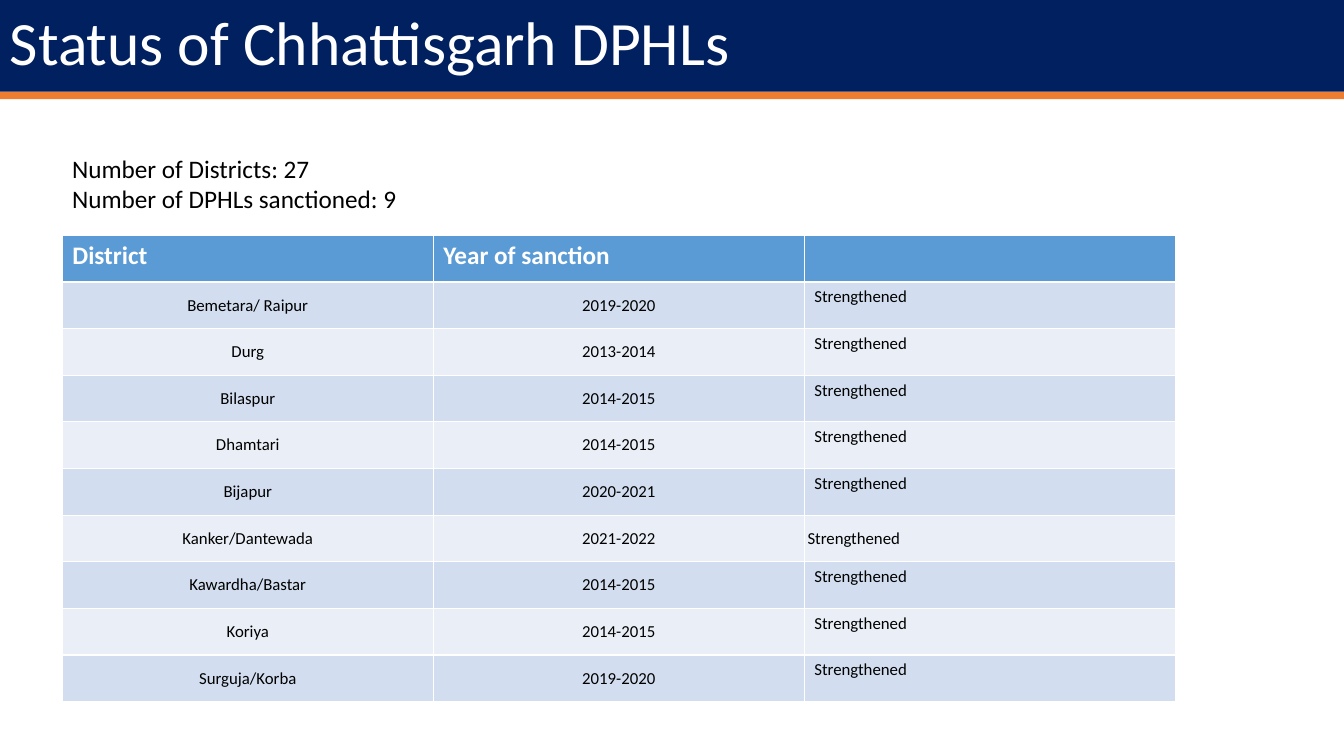
"""Build the slide on the status of the Chhattisgarh DPHLs."""
from pptx import Presentation
from pptx.dml.color import RGBColor
from pptx.enum.shapes import MSO_SHAPE as Shape
from pptx.enum.text import MSO_ANCHOR as Anchor, PP_ALIGN as Align
from pptx.util import Cm, Pt

TITLE = "Status of Chhattisgarh DPHLs"
TOTALS = ["Number of Districts: 27", "Number of DPHLs sanctioned: 9"]
HEADINGS = ["District", "Year of sanction", ""]
STATUS = "Strengthened"
SANCTIONS = [
    ("Bemetara/ Raipur", "2019-2020"),
    ("Durg", "2013-2014"),
    ("Bilaspur", "2014-2015"),
    ("Dhamtari", "2014-2015"),
    ("Bijapur", "2020-2021"),
    ("Kanker/Dantewada", "2021-2022"),
    ("Kawardha/Bastar", "2014-2015"),
    ("Koriya", "2014-2015"),
    ("Surguja/Korba", "2019-2020"),
]
CENTRED_STATUS = "Kanker/Dantewada"

WHITE, BLACK, NAVY, ORANGE = "FFFFFF", "000000", "002060", "ED7D31"
HEADING_BLUE, BANDS = "5B9BD5", ["D2DEEF", "EAEFF7"]
WIDTH, HEIGHT = Cm(33.87), Cm(19.05)
BANNER_HEIGHT, STRIPE_HEIGHT = Cm(2.31), Cm(0.19)
LEFT, TABLE_TOP = Cm(1.57), Cm(5.93)
TABLE_WIDTH, TABLE_HEIGHT = Cm(28.05), Cm(11.75)


def paint(colour_format, colour):
    colour_format.rgb = RGBColor.from_string(colour)


def write(frame, lines, size, colour, bold=False, align=Align.LEFT):
    frame.text = "\n".join(lines)
    frame.word_wrap = True
    for paragraph in frame.paragraphs:
        paragraph.alignment = align
        font = paragraph.font
        font.name, font.size, font.bold = "Calibri", Pt(size), bold
        paint(font.color, colour)


def add_band(slide, top, height, colour):
    band = slide.shapes.add_shape(Shape.RECTANGLE, 0, top, WIDTH, height)
    band.shadow.inherit = False
    band.fill.solid()
    paint(band.fill.fore_color, colour)
    band.line.fill.background()
    return band


def fill_cell(cell, text, fill, size, colour, bold=False, align=Align.LEFT):
    cell.fill.solid()
    paint(cell.fill.fore_color, fill)
    write(cell.text_frame, [text], size, colour, bold, align)


def tighten(cell):
    cell.vertical_anchor = Anchor.MIDDLE
    cell.margin_left = cell.margin_right = Cm(0.08)
    cell.margin_top = cell.margin_bottom = Cm(0.05)


def add_sanctions(slide):
    row_count, column_count = len(SANCTIONS) + 1, len(HEADINGS)
    table = slide.shapes.add_table(
        row_count, column_count, LEFT, TABLE_TOP, TABLE_WIDTH, TABLE_HEIGHT).table
    for column, heading in enumerate(HEADINGS):
        fill_cell(table.cell(0, column), heading, HEADING_BLUE, 18, WHITE, bold=True)
    for row, (district, year) in enumerate(SANCTIONS, start=1):
        band = BANDS[(row - 1) % 2]
        for column, text in enumerate([district, year, STATUS]):
            cell = table.cell(row, column)
            is_status = column == column_count - 1
            align = Align.LEFT if is_status else Align.CENTER
            fill_cell(cell, text, band, 12, BLACK, align=align)
            if not is_status or district == CENTRED_STATUS:
                tighten(cell)


def main():
    deck = Presentation()
    deck.slide_width, deck.slide_height = WIDTH, HEIGHT
    slide = deck.slides.add_slide(deck.slide_layouts[6])

    add_band(slide, BANNER_HEIGHT, STRIPE_HEIGHT, ORANGE)
    banner = add_band(slide, 0, BANNER_HEIGHT, NAVY)
    write(banner.text_frame, [TITLE], 44, WHITE)
    banner.text_frame.vertical_anchor = Anchor.MIDDLE
    banner.text_frame.paragraphs[0].line_spacing = 0.9

    add_sanctions(slide)
    totals = slide.shapes.add_textbox(LEFT, Cm(3.73), Cm(17.15), Cm(1.8))
    write(totals.text_frame, TOTALS, 18, BLACK)
    deck.save("out.pptx")


if __name__ == "__main__":
    main()
